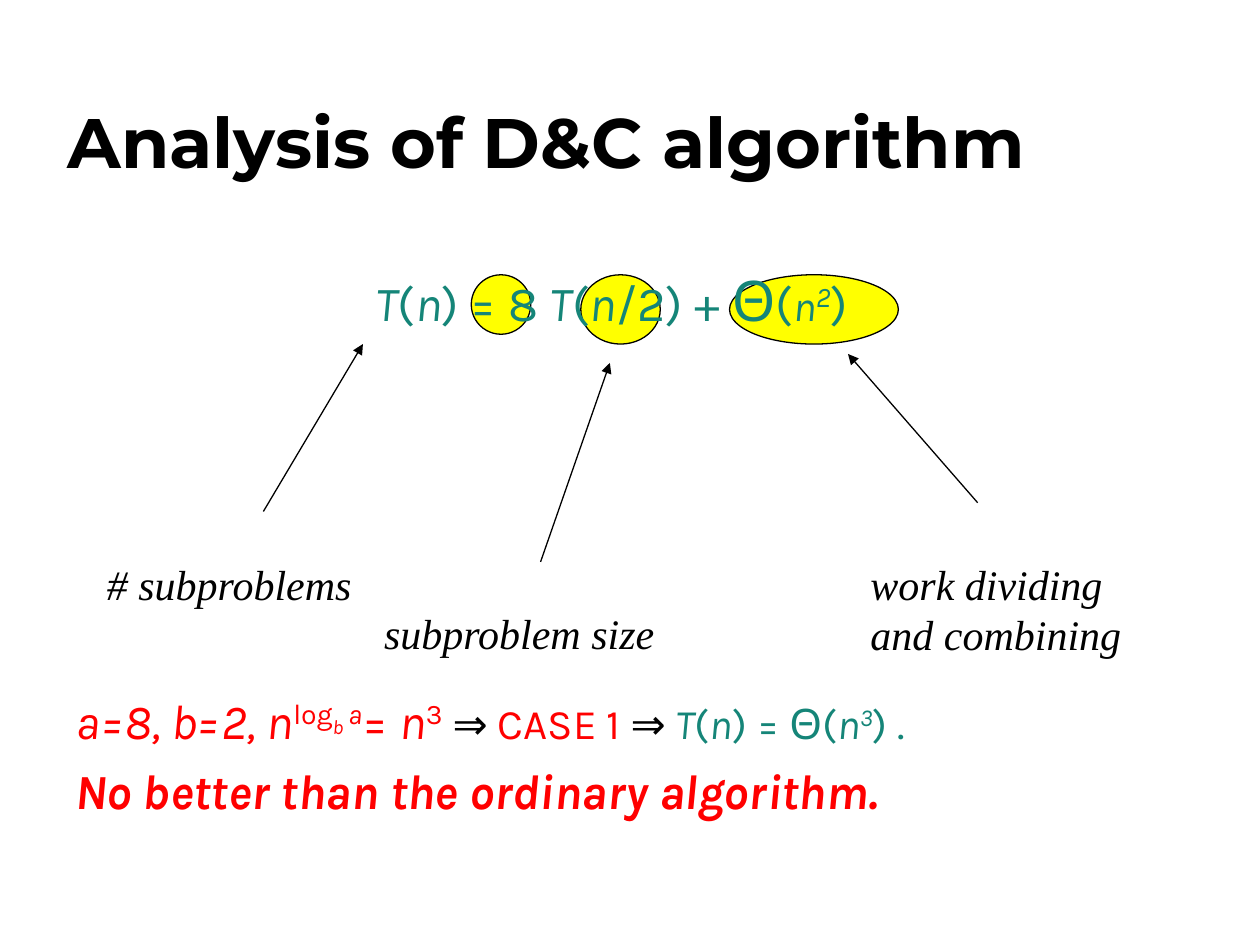
from dataclasses import dataclass

from lxml.etree import SubElement
from pptx import Presentation
from pptx.dml.color import RGBColor
from pptx.enum.shapes import MSO_CONNECTOR, MSO_SHAPE
from pptx.enum.text import MSO_ANCHOR
from pptx.oxml.ns import qn
from pptx.util import Pt

COLORS = {"ink": "000000", "teal": "158578", "red": "FF0000", "mark": "FFFF00"}


@dataclass
class Run:
    text: str
    size: float = 28
    color: str = "teal"
    italic: bool = False
    bold: bool = False
    font: str = "Karla"
    raised: int = 0  # percent above the baseline


@dataclass
class Box:
    left: float
    top: float
    width: float
    height: float


@dataclass
class Label:
    box: Box
    lines: list[str]
    spacing: float
    start: tuple[float, float]
    tip: tuple[float, float]


def paint(color: str) -> RGBColor:
    return RGBColor.from_string(COLORS[color])


def place(box: Box) -> list[Pt]:
    return [Pt(v) for v in (box.left, box.top, box.width, box.height)]


def add_oval(slide, box: Box) -> None:
    oval = slide.shapes.add_shape(MSO_SHAPE.OVAL, *place(box))
    oval.shadow.inherit = False
    oval.fill.solid()
    oval.fill.fore_color.rgb = paint("mark")
    oval.line.color.rgb = paint("ink")
    oval.line.width = Pt(0.75)


def add_text(slide, box: Box, rows: list[list[Run]], wrap: bool = True,
             spacing: float = 1, gap: float = 0, anchor=MSO_ANCHOR.TOP) -> None:
    frame = slide.shapes.add_textbox(*place(box)).text_frame
    frame.word_wrap = wrap
    frame.vertical_anchor = anchor
    frame.text = "\n".join("" for _ in rows)
    for i, (para, row) in enumerate(zip(frame.paragraphs, rows)):
        para.line_spacing = spacing
        para.space_before = Pt(gap if i else 0)
        for part in row:
            run = para.add_run()
            run.text = part.text
            font = run.font
            font.name, font.size = part.font, Pt(part.size)
            font.italic, font.bold = part.italic, part.bold
            font.color.rgb = paint(part.color)
            if part.raised:
                props = run._r.get_or_add_rPr()
                props.set("baseline", str(part.raised * 1000))


def add_arrow(slide, start: tuple[float, float], tip: tuple[float, float]) -> None:
    ends = [Pt(v) for v in (*start, *tip)]
    arrow = slide.shapes.add_connector(MSO_CONNECTOR.STRAIGHT, *ends)
    arrow.line.color.rgb = paint("ink")
    arrow.line.width = Pt(0.75)
    SubElement(arrow.line._get_or_add_ln(), qn("a:tailEnd"), type="triangle")
    SubElement(arrow._element.spPr, qn("a:effectLst"))


OVALS = [
    Box(416.9, 157, 96.5, 39.6),
    Box(331.9, 157, 45.4, 39.6),
    Box(269.3, 157, 34, 34),
]

FORMULA = [
    Run("T", italic=True), Run("("), Run("n", italic=True), Run(") = 8 "),
    Run("T", italic=True), Run("("), Run("n", italic=True), Run("/2) + "),
    Run("Θ", 32), Run("("), Run("n", 24, italic=True),
    Run("2", italic=True, raised=30), Run(")"),
]

RESULT = [
    Run("a=8, b=2, n", color="red", italic=True),
    Run("log", color="red", raised=30),
    Run("b ", 20, "red", True, raised=14),
    Run("a", color="red", italic=True, raised=30),
    Run("= ", color="red"),
    Run("n", color="red", italic=True),
    Run("3", color="red", raised=30),
    Run(" ", 24), Run("⇒ ", 24, "ink"),
    Run("CASE 1 ", 24, "red"), Run("⇒ ", 24, "ink"),
    Run("T", 24, italic=True), Run("(", 24), Run("n", 24, italic=True),
    Run(") = Θ(", 24), Run("n", 24, italic=True),
    Run("3", 24, italic=True, raised=30), Run(") .", 24),
]

VERDICT = [Run("No better than the ordinary algorithm.", color="red",
               italic=True, bold=True)]

LABELS = [
    Label(Box(54, 321.1, 155.5, 30.2), ["# subproblems"], 0.8,
          (150.5, 292.3), (207.4, 196.6)),
    Label(Box(212.4, 349.2, 169.9, 30.2), ["subproblem size"], 0.8,
          (308.9, 321.1), (348.5, 207.4)),
    Label(Box(490.3, 315.4, 157.7, 64.8), ["work dividing", "and combining"], 1,
          (558.7, 287.3), (484.6, 202.3)),
]


def main() -> None:
    deck = Presentation()
    deck.slide_width, deck.slide_height = Pt(720), Pt(540)
    slide = deck.slides.add_slide(deck.slide_layouts[6])

    # Highlights behind the recurrence
    for oval in OVALS:
        add_oval(slide, oval)

    # Title, recurrence and conclusion
    title = Run("Analysis of D&C algorithm", 40, "ink", bold=True, font="Montserrat")
    add_text(slide, Box(31.7, 18, 612, 90), [[title]], anchor=MSO_ANCHOR.BOTTOM)
    add_text(slide, Box(207.7, 148.3, 400, 46), [FORMULA])
    add_text(slide, Box(36, 390.9, 643.7, 82), [RESULT, VERDICT], gap=6.5)

    # Labels with arrows to the terms
    for label in LABELS:
        rows = [[Run(line, 24, "ink", True, font="Times New Roman")]
                for line in label.lines]
        add_text(slide, label.box, rows, wrap=False, spacing=label.spacing)
        add_arrow(slide, label.start, label.tip)

    deck.save("out.pptx")


if __name__ == "__main__":
    main()
